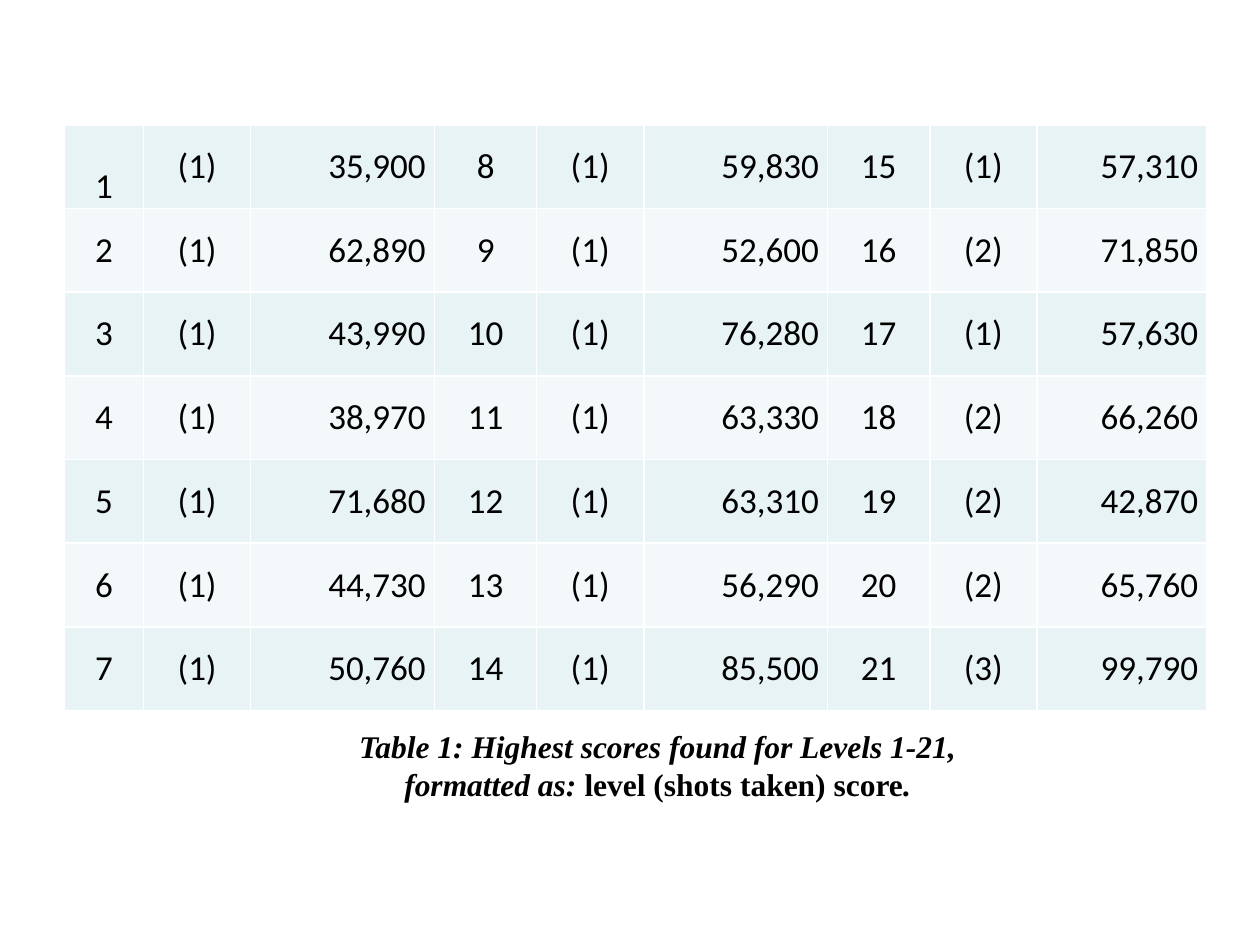
from dataclasses import dataclass

from lxml.etree import SubElement
from pptx import Presentation
from pptx.dml.color import RGBColor as RGB
from pptx.enum.text import MSO_ANCHOR as ANCHOR, MSO_AUTO_SIZE as AUTO, PP_ALIGN as ALIGN
from pptx.oxml.ns import qn
from pptx.util import Inches, Pt


@dataclass(frozen=True)
class Theme:
    text: RGB = RGB(0, 0, 0)
    border: RGB = RGB(0xFF, 0xFF, 0xFF)
    bands: tuple = (RGB(0xE7, 0xF3, 0xF4), RGB(0xF3, 0xF9, 0xFA))
    table_font: str = "Calibri"
    caption_font: str = "Times New Roman"
    table_size: Pt = Pt(20)
    caption_size: Pt = Pt(18)
    border_width: Pt = Pt(1)


THEME = Theme()
ROWS = 7
COL_WIDTHS = (0.63, 0.85, 1.46, 0.81, 0.85, 1.46, 0.81, 0.85, 1.35)
COL_ALIGNS = (ALIGN.CENTER, ALIGN.CENTER, ALIGN.RIGHT) * 3
BEST_SCORES = [
    (1, 35900), (1, 62890), (1, 43990), (1, 38970), (1, 71680), (1, 44730), (1, 50760),
    (1, 59830), (1, 52600), (1, 76280), (1, 63330), (1, 63310), (1, 56290), (1, 85500),
    (1, 57310), (2, 71850), (1, 57630), (2, 66260), (2, 42870), (2, 65760), (3, 99790),
]
CAPTION = (
    ("Table 1: Highest scores found for Levels 1-21,\vformatted as: ", True),
    ("level (shots taken) score", False),
    (".", True),
)


def set_attrs(obj, **values):
    for name, value in values.items():
        setattr(obj, name, value)


def add_run(p, text, **font):
    first, *rest = text.split("\v")
    for i, part in enumerate([first, *rest]):
        if i:
            p.add_line_break()
        r = p.add_run()
        r.text = part
        set_attrs(r.font, **font)
        r.font.color.rgb = THEME.text


def set_borders(cell):
    tc_pr = cell._tc.get_or_add_tcPr()
    for side in ("lnL", "lnR", "lnT", "lnB"):
        ln = SubElement(tc_pr, qn(f"a:{side}"), w=str(THEME.border_width))
        fill = SubElement(ln, qn("a:solidFill"))
        SubElement(fill, qn("a:srgbClr"), val=str(THEME.border))


def fill_cell(cell, text, align, color):
    set_borders(cell)
    cell.fill.solid()
    cell.fill.fore_color.rgb = color
    set_attrs(cell, vertical_anchor=ANCHOR.MIDDLE, margin_left=Inches(0.07),
              margin_right=Inches(0.07), margin_top=0, margin_bottom=0)
    p = cell.text_frame.paragraphs[0]
    p.alignment = align
    add_run(p, text, name=THEME.table_font, size=THEME.table_size, bold=False)


def row_texts(row):
    texts = []
    for i in range(row, len(BEST_SCORES), ROWS):
        shots, score = BEST_SCORES[i]
        texts += [str(i + 1), f"({shots})", f"{score:,}"]
    return texts


def add_score_table(s):
    table = s.shapes.add_table(ROWS, len(COL_WIDTHS), Inches(0.51), Inches(0.99),
                               Inches(9.06), Inches(4.65)).table
    set_attrs(table, first_row=False, horz_banding=False)
    for column, width in zip(table.columns, COL_WIDTHS):
        column.width = Inches(width)
    for row in range(ROWS):
        color = THEME.bands[row % 2]
        for col, text in enumerate(row_texts(row)):
            fill_cell(table.cell(row, col), text, COL_ALIGNS[col], color)
    table.cell(0, 0).vertical_anchor = ANCHOR.BOTTOM


def add_caption(s):
    sp = s.shapes.add_textbox(Inches(2.72), Inches(5.72), Inches(5), Inches(0.74))
    tf = sp.text_frame
    set_attrs(tf, word_wrap=True, auto_size=AUTO.SHAPE_TO_FIT_TEXT)
    p = tf.paragraphs[0]
    set_attrs(p, alignment=ALIGN.CENTER, space_before=Pt(12), space_after=Pt(6))
    for text, italic in CAPTION:
        add_run(p, text, name=THEME.caption_font, size=THEME.caption_size,
                bold=True, italic=italic)


def main():
    prs = Presentation()
    set_attrs(prs, slide_width=Inches(10), slide_height=Inches(7.5))
    s = prs.slides.add_slide(prs.slide_layouts[6])
    add_score_table(s)
    add_caption(s)
    prs.save("out.pptx")


if __name__ == "__main__":
    main()
